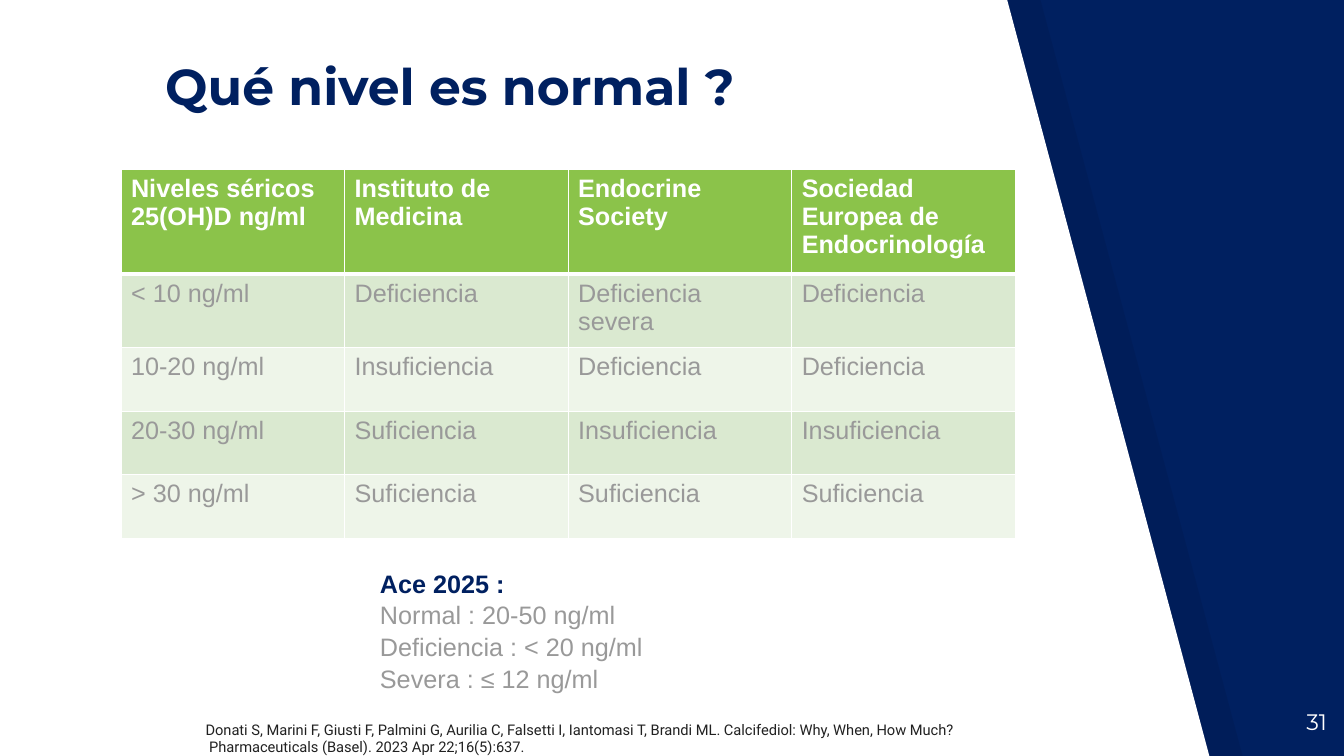
from lxml.etree import SubElement
from pptx import Presentation
from pptx.dml.color import RGBColor
from pptx.enum.text import PP_ALIGN as Align
from pptx.oxml import parse_xml
from pptx.oxml.ns import nsdecls, qn
from pptx.util import Inches, Pt

COLORS = {
    "navy": "002060",
    "white": "FFFFFF",
    "black": "000000",
    "green": "8BC34A",
    "band_dark": "DAE9D0",
    "band_light": "EEF5E9",
    "gray": "999999",
    "ink": "212121",
}

TITLE = dict(name="Montserrat", size=Pt(36), bold=True, color="navy")
HEADER = dict(name="Arial", size=Pt(18), bold=True, color="white")
BODY = dict(name="Arial", size=Pt(18), bold=False, color="gray")
SUBHEAD = dict(BODY, bold=True, color="navy")
CITATION = dict(name="Roboto", size=Pt(10.5), color="ink")
PAGE_NUMBER = dict(name="Montserrat", size=Pt(16), color="white")

LEVELS = [
    ["Niveles séricos\n25(OH)D ng/ml", "Instituto de Medicina", "Endocrine Society",
     "Sociedad Europea de Endocrinología"],
    ["< 10 ng/ml", "Deficiencia", "Deficiencia severa", "Deficiencia"],
    ["10-20 ng/ml", "Insuficiencia", "Deficiencia", "Deficiencia"],
    ["20-30 ng/ml", "Suficiencia", "Insuficiencia", "Insuficiencia"],
    ["> 30 ng/ml", "Suficiencia", "Suficiencia", "Suficiencia"],
]
ROW_HEIGHTS = [1.04, 0.73, 0.63, 0.63, 0.63]


def rgb(color):
    return RGBColor.from_string(COLORS[color])


def style(font, look):
    for key, value in look.items():
        if key == "color":
            font.color.rgb = rgb(value)
        else:
            setattr(font, key, value)


def write(frame, lines):
    """Fill a text frame with (text, look) pairs, one paragraph each."""
    for index, (text, look) in enumerate(lines):
        paragraph = frame.add_paragraph() if index else frame.paragraphs[0]
        run = paragraph.add_run()
        run.text = text
        style(run.font, look)


def add_text(slide, box, lines):
    frame = slide.shapes.add_textbox(*map(Inches, box)).text_frame
    frame.word_wrap = True
    write(frame, lines)
    return frame


def add_panel(slide, left, color, opacity=None):
    """Draw the slanted panel that covers the slide from the given left edge."""
    corners = [(left, 7.52), (left + 12, 7.52), (left + 9.99, 0)]
    builder = slide.shapes.build_freeform(Inches(left), Inches(-0.02), scale=1.0)
    builder.add_line_segments([(Inches(x), Inches(y)) for x, y in corners])
    panel = builder.convert_to_shape()
    panel.shadow.inherit = False
    panel.line.fill.background()
    panel.fill.solid()
    panel.fill.fore_color.rgb = rgb(color)
    if opacity is not None:
        tint = panel.fill._xPr.find(".//" + qn("a:srgbClr"))
        SubElement(tint, qn("a:alpha"), val=str(opacity * 1000))


def set_borders(cell, top, bottom):
    widths = {"lnL": 1, "lnR": 1, "lnT": top, "lnB": bottom}
    properties = cell._tc.get_or_add_tcPr()
    for position, (side, width) in enumerate(widths.items()):
        properties.insert(position, parse_xml(
            f'<a:{side} {nsdecls("a")} w="{Pt(width)}"><a:solidFill>'
            f'<a:srgbClr val="{COLORS["white"]}"/></a:solidFill></a:{side}>'))


def add_levels_table(slide):
    frame = slide.shapes.add_table(
        len(LEVELS), len(LEVELS[0]), Inches(1.2), Inches(1.68), Inches(8.87),
        Inches(sum(ROW_HEIGHTS)))
    table = frame.table
    for row, height in zip(table.rows, ROW_HEIGHTS):
        row.height = Inches(height)
    for r, texts in enumerate(LEVELS):
        look = BODY if r else HEADER
        fill = ("band_dark" if r % 2 else "band_light") if r else "green"
        for c, text in enumerate(texts):
            cell = table.cell(r, c)
            cell.fill.solid()
            cell.fill.fore_color.rgb = rgb(fill)
            set_borders(cell, top=3 if r == 1 else 1, bottom=1 if r else 3)
            write(cell.text_frame, [(line, look) for line in text.split("\n")])


def add_page_number(slide, number):
    frame = add_text(slide, (12.46, 6.93, 0.8, 0.57), [(number, PAGE_NUMBER)])
    frame.paragraphs[0].alignment = Align.RIGHT
    for side in ("left", "top", "right", "bottom"):
        setattr(frame, f"margin_{side}", Inches(0.1))


def main():
    deck = Presentation()
    deck.slide_width, deck.slide_height = Inches(13.33), Inches(7.5)
    slide = deck.slides.add_slide(deck.slide_layouts[6])
    slide.background.fill.solid()
    slide.background.fill.fore_color.rgb = rgb("navy")

    add_panel(slide, 0.33, "black", opacity=7)
    add_panel(slide, 0, "white")
    add_levels_table(slide)
    add_page_number(slide, "31")
    add_text(slide, (1.94, 7.1, 11.39, 0.45), [
        ("Donati S, Marini F, Giusti F, Palmini G, Aurilia C, Falsetti I, Iantomasi T, "
         "Brandi ML. Calcifediol: Why, When, How Much?", CITATION),
        (" Pharmaceuticals (Basel). 2023 Apr 22;16(5):637.", CITATION),
    ])
    add_text(slide, (1.54, 0.5, 7.52, 0.71), [("Qué nivel es normal ?", TITLE)])
    thresholds = add_text(slide, (3.67, 5.57, 4.51, 1.31), [
        ("Ace 2025 :", SUBHEAD),
        ("Normal : 20-50 ng/ml", BODY),
        ("Deficiencia : < 20 ng/ml", BODY),
        ("Severa : ≤ 12 ng/ml", BODY),
    ])
    for paragraph in thresholds.paragraphs:
        paragraph.line_spacing = 1.05

    deck.save("out.pptx")


if __name__ == "__main__":
    main()
